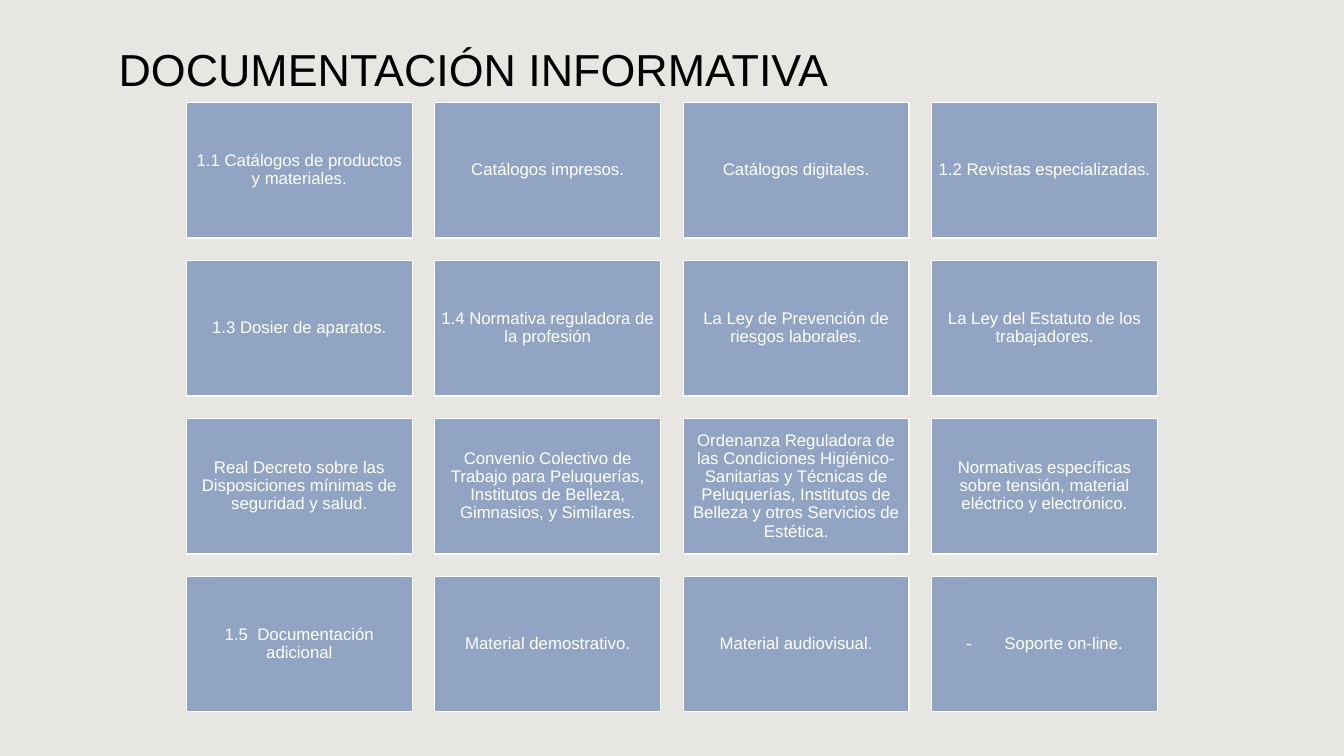
from dataclasses import dataclass

from pptx import Presentation
from pptx.dml.color import RGBColor
from pptx.enum.shapes import MSO_SHAPE as Shape
from pptx.enum.text import MSO_ANCHOR as Anchor, PP_ALIGN as Align
from pptx.util import Cm, Pt


@dataclass(frozen=True)
class Theme:
    """Colours, font and type sizes of the slide."""
    background: RGBColor = RGBColor.from_string("E8E6E2")
    card: RGBColor = RGBColor.from_string("92A4C4")
    card_text: RGBColor = RGBColor.from_string("FFFFFF")
    title_text: RGBColor = RGBColor.from_string("000000")
    font: str = "Arial"
    title_size: Pt = Pt(32)
    card_size: Pt = Pt(12)


THEME = Theme()
COLUMNS = 4
TOPICS = [
    "1.1 Catálogos de productos y materiales.",
    "Catálogos impresos.",
    "Catálogos digitales.",
    "1.2 Revistas especializadas.",
    "1.3 Dosier de aparatos.",
    "1.4 Normativa reguladora de la profesión",
    "La Ley de Prevención de riesgos laborales.",
    "La Ley del Estatuto de los trabajadores.",
    "Real Decreto sobre las Disposiciones mínimas de seguridad y salud.",
    "Convenio Colectivo de Trabajo para Peluquerías, Institutos de Belleza, "
    "Gimnasios, y Similares.",
    "Ordenanza Reguladora de las Condiciones Higiénico-Sanitarias y Técnicas "
    "de Peluquerías, Institutos de Belleza y otros Servicios de Estética.",
    "Normativas específicas sobre tensión, material eléctrico y electrónico.",
    "1.5 Documentación adicional",
    "Material demostrativo.",
    "Material audiovisual.",
    "- Soporte on-line.",
]
WIDE_GAPS = {"1.5": Pt(3.3), "-": Pt(20)}


def style_run(run, size, color):
    run.font.name = THEME.font
    run.font.size = size
    run.font.color.rgb = color


def add_title(slide, text):
    title = slide.shapes.add_textbox(Cm(2.74), Cm(0.58), Cm(28.37), Cm(1.98))
    frame = title.text_frame
    frame.word_wrap = True
    frame.vertical_anchor = Anchor.BOTTOM
    frame.text = text
    frame.paragraphs[0].line_spacing = 0.9
    style_run(frame.paragraphs[0].runs[0], THEME.title_size, THEME.title_text)


def fill_topic(paragraph, topic):
    """Write the topic, widening the space after a marker that needs it."""
    marker, _, rest = topic.partition(" ")
    if marker in WIDE_GAPS:
        paragraph.text = marker
        gap = paragraph.add_run()
        gap.text = " "
        gap._r.get_or_add_rPr().set("spc", str(round(WIDE_GAPS[marker].pt * 100)))
        paragraph.add_run().text = rest
    else:
        paragraph.text = topic
    for run in paragraph.runs:
        style_run(run, THEME.card_size, THEME.card_text)


def add_card(slide, left, top, topic):
    card = slide.shapes.add_shape(Shape.RECTANGLE, left, top, Cm(5.69), Cm(3.41))
    card.shadow.inherit = False
    card.fill.solid()
    card.fill.fore_color.rgb = THEME.card
    card.line.color.rgb = THEME.card_text
    card.line.width = Pt(0.85)
    frame = card.text_frame
    frame.word_wrap = True
    frame.vertical_anchor = Anchor.MIDDLE
    frame.margin_left = frame.margin_right = Cm(0.13)
    frame.margin_top = frame.margin_bottom = Cm(0.13)
    paragraph = frame.paragraphs[0]
    paragraph.alignment = Align.CENTER
    paragraph.line_spacing = 0.9
    fill_topic(paragraph, topic)


def add_card_grid(slide, topics):
    for index, topic in enumerate(topics):
        row, column = divmod(index, COLUMNS)
        add_card(slide, Cm(4.7 + 6.26 * column), Cm(2.59 + 3.98 * row), topic)


def main():
    deck = Presentation()
    deck.slide_width, deck.slide_height = Cm(33.87), Cm(19.05)
    slide = deck.slides.add_slide(deck.slide_layouts[6])
    slide.background.fill.solid()
    slide.background.fill.fore_color.rgb = THEME.background
    add_title(slide, "DOCUMENTACIÓN INFORMATIVA")
    add_card_grid(slide, TOPICS)
    deck.save("out.pptx")


if __name__ == "__main__":
    main()
